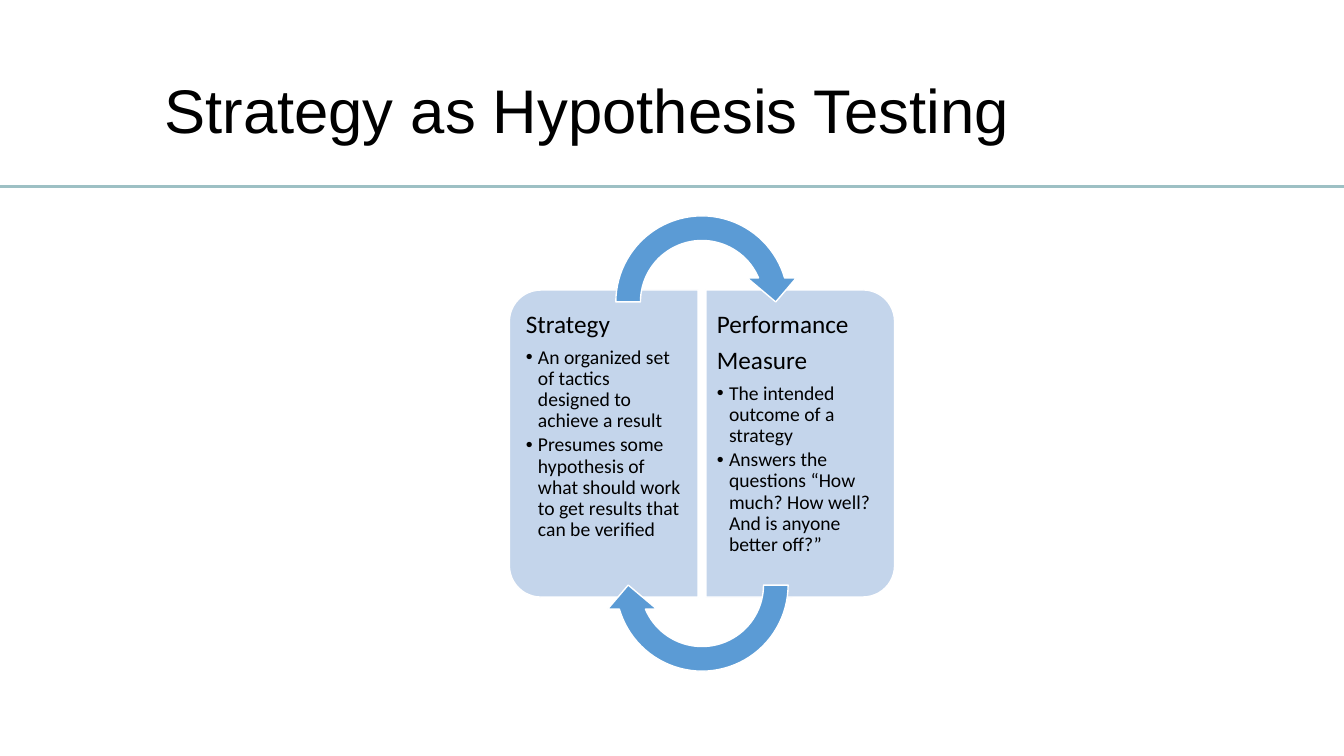
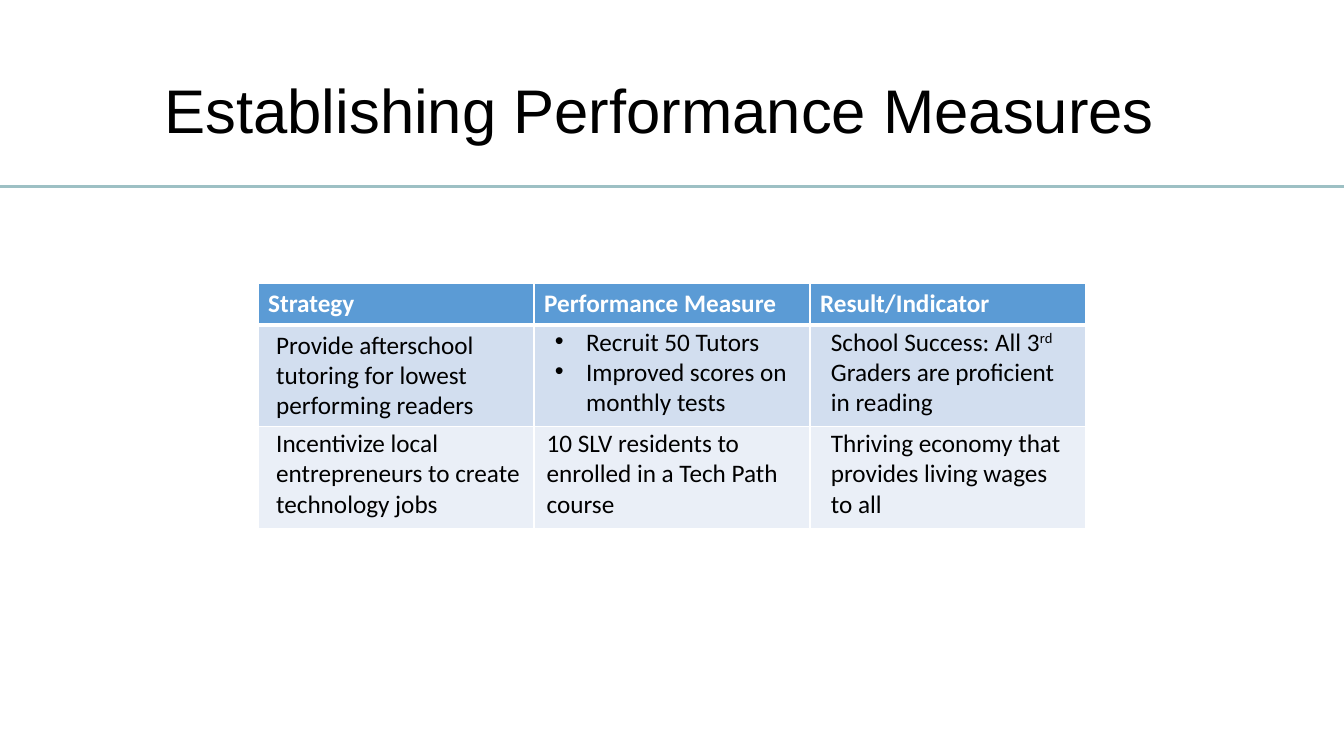
from pptx import Presentation
from pptx.dml.color import RGBColor
from pptx.enum.shapes import MSO_CONNECTOR as Connector, MSO_SHAPE as Shape
from pptx.enum.text import MSO_ANCHOR as Anchor
from pptx.oxml.ns import qn
from pptx.util import Inches, Pt
from lxml.etree import SubElement

BLACK = RGBColor(0x00, 0x00, 0x00)
WHITE = RGBColor(0xFF, 0xFF, 0xFF)
RULE = RGBColor(0x9D, 0xC0, 0xC4)
ACCENT = RGBColor(0x5B, 0x9B, 0xD5)
PANEL = RGBColor(0xC4, 0xD5, 0xEB)
ROW_FILLS = [ACCENT, RGBColor(0xD2, 0xDE, 0xEF), RGBColor(0xEA, 0xEF, 0xF7)]

TITLE_FONT, BODY_FONT = "Arial", "Calibri"
WIDTH, HEIGHT = Inches(13.33), Inches(7.5)
COL, ROW = WIDTH / 100, HEIGHT / 100

PANELS = [
    (["Strategy"],
     ["An organized set of tactics designed to achieve a result",
      "Presumes some hypothesis of what should work to get results that can be verified"]),
    (["Performance", "Measure"],
     ["The intended outcome of a strategy",
      "Answers the questions “How much? How well? And is anyone better off?”"]),
]
HEADERS = ["Strategy", "Performance Measure", "Result/Indicator"]
ROW_SHARES = [0.17, 0.415, 0.415]
MEASURES = [
    (1, 0, 0.03, -0.01, 0.92, ["Provide afterschool tutoring for lowest performing readers"]),
    (1, 1, 0.04, -0.04, 0.92, ["Recruit 50 Tutors", "Improved scores on monthly tests"]),
    (1, 2, 0.04, -0.04, 0.92, ["School Success: All 3^rd^ Graders are proficient in reading"]),
    (2, 0, 0.03, -0.04, 0.97, ["Incentivize local entrepreneurs to create technology jobs"]),
    (2, 1, 0.01, -0.04, 0.92, ["10 SLV residents to enrolled in a Tech Path course"]),
    (2, 2, 0.04, -0.04, 0.92, ["Thriving economy that provides living wages to all"]),
]


def grid_box(col, row, cols, rows):
    return [round(v) for v in (col * COL, row * ROW, cols * COL, rows * ROW)]


def style(paragraph, size, font=BODY_FONT, color=BLACK, bold=False):
    for run in paragraph.runs:
        run.font.size = Pt(size)
        run.font.name = font
        run.font.bold = bold
        run.font.color.rgb = color


def add_bullet(paragraph, indent):
    props = paragraph._p.get_or_add_pPr()
    props.set("marL", str(Inches(indent)))
    props.set("indent", str(-Inches(indent)))
    SubElement(props, qn("a:buFont")).set("typeface", "Arial")
    SubElement(props, qn("a:buChar")).set("char", "•")


def paragraphs(frame, count):
    return [frame.paragraphs[0]] + [frame.add_paragraph() for _ in range(count - 1)]


def add_textbox(slide, box, anchor=Anchor.TOP):
    frame = slide.shapes.add_textbox(*box).text_frame
    frame.word_wrap = True
    frame.vertical_anchor = anchor
    return frame


def add_titled_slide(deck, heading):
    slide = deck.slides.add_slide(deck.slide_layouts[6])
    level = round(24.67 * ROW)
    rule = slide.shapes.add_connector(Connector.STRAIGHT, 0, level, WIDTH, level)
    rule.line.color.rgb = RULE
    rule.line.width = Pt(2)
    SubElement(rule._element.spPr, qn("a:effectLst"))
    title = add_textbox(slide, grid_box(11.5, 5.4, 81.62, 19.2), Anchor.MIDDLE)
    title.text = heading
    title.paragraphs[0].line_spacing = 0.9
    style(title.paragraphs[0], 44, TITLE_FONT)
    return slide


def add_block(slide, preset, box, rotation, fill, adjustments):
    block = slide.shapes.add_shape(preset, *box)
    for index, value in enumerate(adjustments):
        block.adjustments[index] = value
    block.rotation = rotation
    block.shadow.inherit = False
    block.fill.solid()
    block.fill.fore_color.rgb = fill
    block.line.color.rgb = WHITE
    block.line.width = Pt(1)


def add_panel(slide, left, top, width, height, side, headings, points):
    turned = [left + (width - height) // 2, top + (height - width) // 2, height, width]
    add_block(slide, Shape.ROUND_2_SAME_RECTANGLE, turned, 90 if side else 270, PANEL, [0.167, 0])
    inset = 0 if side else round(0.05 * width)
    frame = add_textbox(slide, [left + inset, top + round(0.03 * height),
                                round(0.95 * width), round(0.94 * height)])
    left_margin, right_margin = (0.11, 0.07) if side else (0.07, 0.13)
    frame.margin_left, frame.margin_right = Inches(left_margin), Inches(right_margin)
    frame.margin_top = frame.margin_bottom = Inches(0.12)
    lines = headings + points
    for index, paragraph in enumerate(paragraphs(frame, len(lines))):
        is_point = index >= len(headings)
        paragraph.text = lines[index]
        if is_point:
            add_bullet(paragraph, 0.12)
        paragraph.line_spacing = 0.9
        paragraph.space_after = Pt(2.1 if is_point else 6.3)
        style(paragraph, 14 if is_point else 18)


def add_cycle(slide, left, top, width, height):
    gap = round(0.02 * width)
    panel_width = (width - gap) // 2
    panel_height = round(0.64 * height)
    panel_top = top + (height - panel_height) // 2
    for side, (headings, points) in enumerate(PANELS):
        add_panel(slide, left + side * (panel_width + gap), panel_top,
                  panel_width, panel_height, side, headings, points)
    arrow = round(0.41 * height)
    arrow_left = left + (width - arrow) // 2
    for arrow_top, rotation in ((top, 0), (top + height - arrow, 180)):
        add_block(slide, Shape.CIRCULAR_ARROW, [arrow_left, arrow_top, arrow, arrow],
                  rotation, ACCENT, [0.125, 11.42, 204.58, 108, 0.125])


def add_borders(cell, top_width, bottom_width):
    props = cell._tc.get_or_add_tcPr()
    for tag, width in (("lnL", 1), ("lnR", 1), ("lnT", top_width), ("lnB", bottom_width)):
        line = SubElement(props, qn(f"a:{tag}"), w=str(Pt(width)))
        SubElement(SubElement(line, qn("a:solidFill")), qn("a:srgbClr")).set("val", str(WHITE))


def add_measure(slide, box, lines):
    frame = add_textbox(slide, box)
    for paragraph, line in zip(paragraphs(frame, len(lines)), lines):
        for index, piece in enumerate(line.split("^")):
            run = paragraph.add_run()
            run.text = piece
            if index % 2:
                run._r.get_or_add_rPr().set("baseline", "30000")
        if len(lines) > 1:
            add_bullet(paragraph, 0.31)
        style(paragraph, 18)


def add_measures(slide, left, top, width, height):
    table = slide.shapes.add_table(len(ROW_SHARES), len(HEADERS), left, top, width, height).table
    for r, share in enumerate(ROW_SHARES):
        table.rows[r].height = round(share * height)
        for c, header in enumerate(HEADERS):
            cell = table.cell(r, c)
            add_borders(cell, 3 if r == 1 else 1, 3 if r == 0 else 1)
            cell.fill.solid()
            cell.fill.fore_color.rgb = ROW_FILLS[r]
            if r == 0:
                cell.text_frame.text = header
                style(cell.text_frame.paragraphs[0], 18, color=WHITE, bold=True)
    column = width / len(HEADERS)
    for r, c, shift, drop, span, lines in MEASURES:
        row_height = ROW_SHARES[r] * height
        row_top = top + sum(ROW_SHARES[:r]) * height
        box = (left + (c + shift) * column, row_top + drop * row_height,
               span * column, row_height)
        add_measure(slide, [round(v) for v in box], lines)


def main():
    deck = Presentation()
    deck.slide_width, deck.slide_height = WIDTH, HEIGHT
    add_cycle(add_titled_slide(deck, "Strategy as Hypothesis Testing"),
              *grid_box(37.9, 26.93, 28.66, 63.47))
    add_measures(add_titled_slide(deck, "Establishing Performance Measures"),
                 *grid_box(19.2, 37.47, 61.6, 32.4))
    deck.save("out.pptx")


if __name__ == "__main__":
    main()
